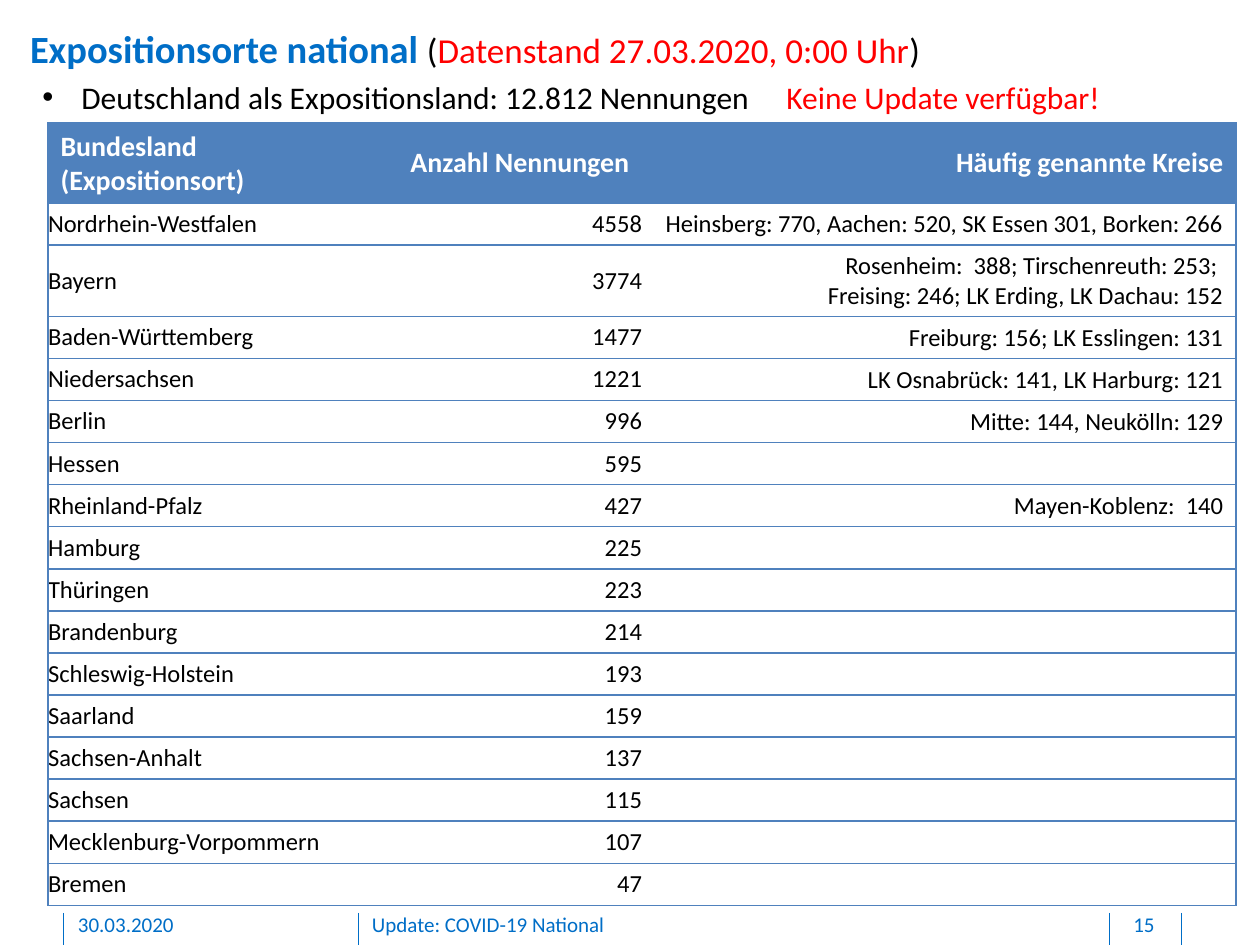
"""Build the slide listing places of exposure by German state."""
from lxml.etree import SubElement
from pptx import Presentation
from pptx.dml.color import RGBColor
from pptx.enum.shapes import MSO_CONNECTOR
from pptx.enum.text import MSO_ANCHOR, PP_ALIGN
from pptx.oxml.ns import qn
from pptx.util import Emu, Pt

THEME = {
    "font": "Calibri",
    "blue": "006EC7", "head": "4F81BD", "red": "FF0000", "black": "000000", "white": "FFFFFF",
    "title": 22, "stand": 20, "lead": 18, "label": 16, "body": 14, "foot": 12,
}
LEFT, MID, RIGHT = PP_ALIGN.LEFT, PP_ALIGN.CENTER, PP_ALIGN.RIGHT


def px(count):
    return Emu(round(count * 914400 / 126))


def write(frame, text, size="body", color="black", bold=False, align=LEFT, bullet=False, more=False):
    for index, line in enumerate(text.split("\n")):
        para = frame.paragraphs[0] if more or index == 0 else frame.add_paragraph()
        para.alignment = align
        if bullet:
            props = para._p.get_or_add_pPr()
            props.set("marL", str(px(39)))
            props.set("indent", str(-px(39)))
            SubElement(props, qn("a:buFont"), typeface="Arial")
            SubElement(props, qn("a:buChar"), char="•")
        if not line:
            SubElement(para._p, qn("a:endParaRPr"), sz=str(THEME[size] * 100))
            continue
        run = para.add_run()
        run.text = line
        run.font.name = THEME["font"]
        run.font.size = Pt(THEME[size])
        run.font.bold = bold
        run.font.color.rgb = RGBColor.from_string(THEME[color])


deck = Presentation()
deck.slide_width, deck.slide_height = px(1260), px(945)
slide = deck.slides.add_slide(deck.slide_layouts[6])

for x in (63, 358, 1109, 1181):
    rule = slide.shapes.add_connector(MSO_CONNECTOR.STRAIGHT, px(x), px(913), px(x), px(945))
    rule.line.color.rgb = RGBColor.from_string(THEME["blue"])
    rule.line.width = Pt(0.5)
    SubElement(rule._element.spPr, qn("a:effectLst"))

title = slide.shapes.add_textbox(px(30), px(25), px(1115), px(47)).text_frame
title.word_wrap = True
title.margin_left = title.margin_right = title.margin_top = title.margin_bottom = 0
write(title, "Expositionsorte national ", size="title", color="blue", bold=True)
for text, color in (("(", "black"), ("Datenstand 27.03.2020, 0:00 Uhr", "red"), (")", "black")):
    write(title, text, size="stand", color=color, more=True)

for text, x, width, align in (
    ("30.03.2020", 78, 256, LEFT),
    ("Update: COVID-19 National", 372, 714, LEFT),
    ("15", 1110, 68, MID),
):
    foot = slide.shapes.add_textbox(px(x), px(912), px(width), px(26)).text_frame
    foot.word_wrap = True
    foot.margin_left = foot.margin_right = foot.margin_top = 0
    write(foot, text, size="foot", color="blue", align=align)

rows = [
    ("Bundesland (Expositionsort)", "Anzahl Nennungen", "Häufig genannte Kreise"),
    ("Nordrhein-Westfalen", "4558", "Heinsberg: 770, Aachen: 520, SK Essen 301, Borken: 266"),
    ("Bayern", "3774", "Rosenheim:  388; Tirschenreuth: 253; \nFreising: 246; LK Erding, LK Dachau: 152"),
    ("Baden-Württemberg", "1477", "Freiburg: 156; LK Esslingen: 131"),
    ("Niedersachsen", "1221", "LK Osnabrück: 141, LK Harburg: 121"),
    ("Berlin", "996", "Mitte: 144, Neukölln: 129"),
    ("Hessen", "595", ""),
    ("Rheinland-Pfalz", "427", "Mayen-Koblenz:  140"),
    ("Hamburg", "225", ""),
    ("Thüringen", "223", ""),
    ("Brandenburg", "214", ""),
    ("Schleswig-Holstein", "193", ""),
    ("Saarland", "159", ""),
    ("Sachsen-Anhalt", "137", ""),
    ("Sachsen", "115", ""),
    ("Mecklenburg-Vorpommern", "107", ""),
    ("Bremen", "47", ""),
]
table = slide.shapes.add_table(len(rows), 3, px(48), px(123), px(1188), px(716)).table
table.first_row = table.horz_banding = False
for column, width in zip(table.columns, (341, 253, 594)):
    column.width = px(width)

for r, row in enumerate(rows):
    table.rows[r].height = px(40 if r else 76)
    for c, text in enumerate(row):
        cell = table.cell(r, c)
        cell.vertical_anchor = MSO_ANCHOR.MIDDLE
        if r and c < 2:
            cell.margin_left = cell.margin_right = cell.margin_top = cell.margin_bottom = 0
        props = cell._tc.get_or_add_tcPr()
        for side, shown in (("L", c == 0), ("R", c == 2), ("T", True), ("B", True)):
            edge = SubElement(props, qn(f"a:ln{side}"), w=str(Pt(1)))
            if shown:
                SubElement(SubElement(edge, qn("a:solidFill")), qn("a:srgbClr"), val=THEME["head"])
            else:
                SubElement(edge, qn("a:noFill"))
        cell.fill.solid()
        cell.fill.fore_color.rgb = RGBColor.from_string(THEME["white" if r else "head"])
        write(cell.text_frame, text, size="body" if r else "label",
              color="black" if r else "white", bold=r == 0, align=RIGHT if c else LEFT)

for text, x, width, color, bullet in (
    ("Deutschland als Expositionsland: 12.812 Nennungen", 30, 742, "black", True),
    ("Keine Update verfügbar!", 774, 470, "red", False),
):
    lead = slide.shapes.add_textbox(px(x), px(72), px(width), px(50)).text_frame
    lead.word_wrap = not bullet
    write(lead, text, size="lead", color=color, bullet=bullet)

deck.save("out.pptx")
